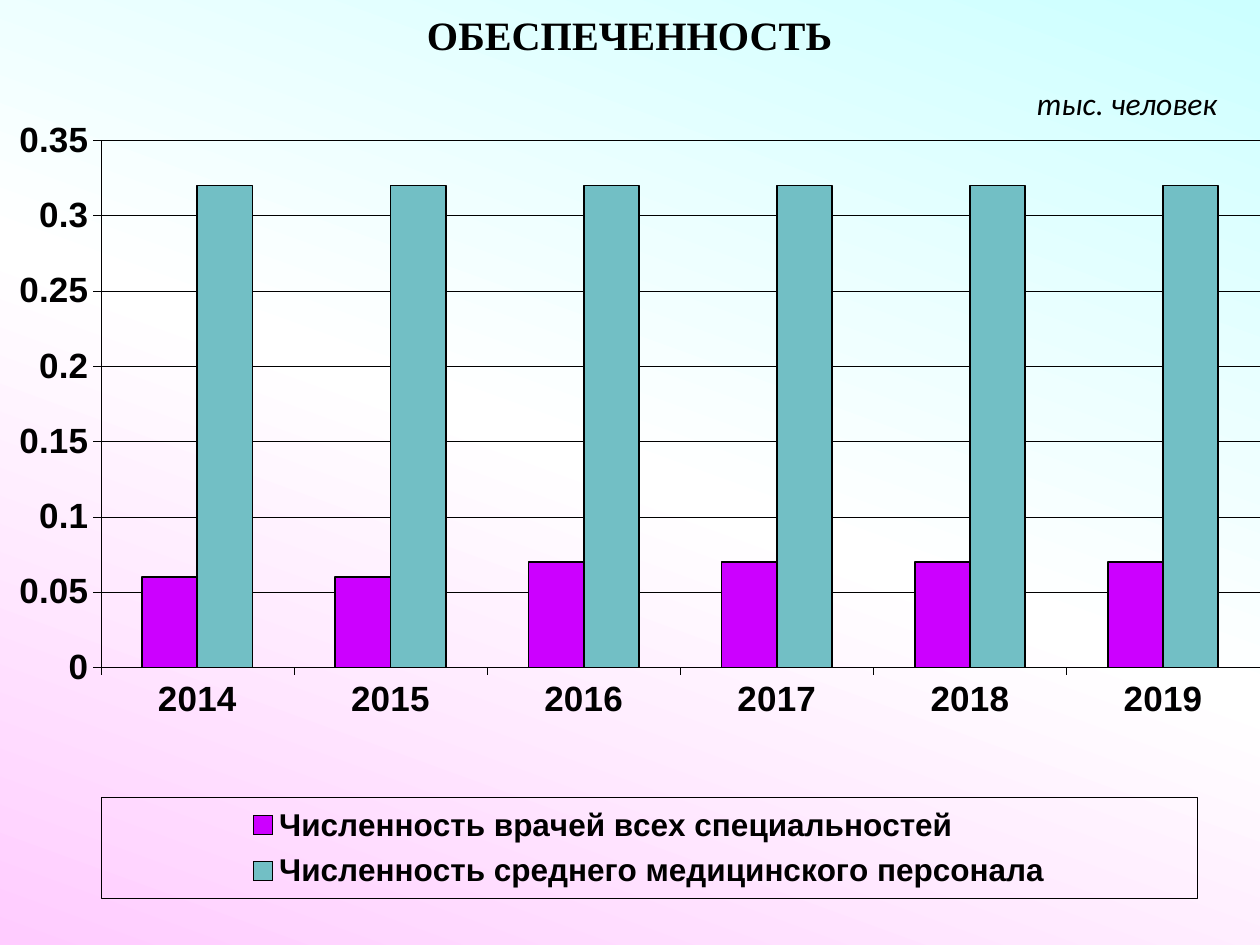
"""Build a slide with a column chart of medical staff by year."""
import copy

import pptx
import pptx.chart.data
import pptx.dml.color
import pptx.enum.chart
import pptx.enum.text
import pptx.oxml
import pptx.oxml.ns
import pptx.util

HUES = {"sky": "CCFFFF", "white": "FFFFFF", "pink": "FFCCFF",
        "ink": "000000", "violet": "CC00FF", "teal": "72BFC5"}
ROWS = [
    ("Численность врачей всех специальностей", "violet",
     (0.06, 0.06, 0.07, 0.07, 0.07, 0.07)),
    ("Численность среднего медицинского персонала", "teal", (0.32,) * 6),
]
Pt = pptx.util.Pt
enum = pptx.enum.chart


def hue(name):
    return pptx.dml.color.RGBColor.from_string(HUES[name])


def write(shape, text, box, size, face, align, wrap=True, bold=False, slant=False):
    shape.left, shape.top, shape.width, shape.height = (
        pptx.util.Inches(n) for n in box)
    frame = shape.text_frame
    frame.word_wrap = wrap
    frame.auto_size = pptx.enum.text.MSO_AUTO_SIZE.NONE
    frame.vertical_anchor = pptx.enum.text.MSO_ANCHOR.MIDDLE
    line = frame.paragraphs[0]
    line.alignment = align
    run = line.add_run()
    run.text = text
    font = run.font
    font.size, font.name, font.bold, font.italic = Pt(size), face, bold, slant
    font.color.rgb = hue("ink")


deck = pptx.Presentation()
deck.slide_width = wide = pptx.util.Inches(10)
deck.slide_height = high = pptx.util.Inches(7.5)
slide = deck.slides.add_slide(deck.slide_layouts[5])

fill = slide.background.fill
fill.gradient()
fill.gradient_angle = 250
stops = slide.element.find(".//" + pptx.oxml.ns.qn("a:gsLst"))
stops.insert(1, copy.deepcopy(stops[0]))
for stop, name, spot in zip(fill.gradient_stops, ("sky", "white", "pink"), (0, 0.5, 1)):
    stop.color.rgb = hue(name)
    stop.position = spot

data = pptx.chart.data.CategoryChartData()
data.categories = [str(year) for year in range(2014, 2020)]
for name, tone, vals in ROWS:
    data.add_series(name, vals)
top = pptx.util.Inches(0.16)
chart = slide.shapes.add_chart(
    enum.XL_CHART_TYPE.COLUMN_CLUSTERED, 0, top, wide, high - top, data).chart
chart.has_title = False
chart.has_legend = True
legend = chart.legend
legend.position = enum.XL_LEGEND_POSITION.RIGHT
legend.include_in_layout = False

cat, val = chart.category_axis, chart.value_axis
val.minimum_scale, val.maximum_scale, val.major_unit = 0, 0.35, 0.05
val.has_major_gridlines = True
for axis in (cat, val):
    axis.major_tick_mark = enum.XL_TICK_MARK.OUTSIDE
    axis.tick_label_position = enum.XL_TICK_LABEL_POSITION.LOW
for font, size in ((chart.font, 20), (cat.tick_labels.font, 20),
                   (val.tick_labels.font, 20), (legend.font, 18)):
    font.size, font.name, font.bold = Pt(size), "Arial", True
    font.color.rgb = hue("ink")

plot = chart.plots[0]
plot.gap_width, plot.overlap, plot.vary_by_categories = 150, 0, False
lines = [(part.format.line, 0.25) for part in (cat, val, val.major_gridlines)]
for bar, (name, tone, vals) in zip(plot.series, ROWS):
    bar.invert_if_negative = False
    bar.format.fill.solid()
    bar.format.fill.fore_color.rgb = hue(tone)
    lines.append((bar.format.line, 1))
for line, width in lines:
    line.width = Pt(width)
    line.color.rgb = hue("ink")

space = pptx.oxml.ns.nsdecls("c", "a")
root = chart.element.chart
for part, inner, box in (
        (root.plotArea, '<c:layoutTarget val="inner"/>', (0.08, 0.13, 0.92, 0.57)),
        (legend._element, "", (0.08, 0.84, 0.87, 0.11))):
    for old in part.findall(pptx.oxml.ns.qn("c:layout")):
        part.remove(old)
    edges = "".join(f'<c:{key}Mode val="edge"/>' for key in "xy")
    sides = "".join(f'<c:{key} val="{n}"/>' for key, n in zip("xywh", box))
    place = pptx.oxml.parse_xml(
        f"<c:layout {space}><c:manualLayout>{inner}{edges}{sides}"
        "</c:manualLayout></c:layout>")
    part.insert(1 if part is legend._element else 0, place)
frame = pptx.oxml.parse_xml(
    f'<c:spPr {space}><a:noFill/><a:ln w="3175"><a:solidFill>'
    f'<a:srgbClr val="{HUES["ink"]}"/></a:solidFill></a:ln></c:spPr>')
legend._element.find(pptx.oxml.ns.qn("c:txPr")).addprevious(frame)

align = pptx.enum.text.PP_ALIGN
write(slide.shapes.title, "ОБЕСПЕЧЕННОСТЬ", (0, 0, 10, 0.55), 23,
      "Times New Roman", align.CENTER, bold=True)
write(slide.shapes.add_textbox(0, 0, 0, 0), "тыс. человек", (8.13, 0.62, 1.65, 0.4), 18,
      "Calibri", align.LEFT, wrap=False, slant=True)

deck.save("out.pptx")
